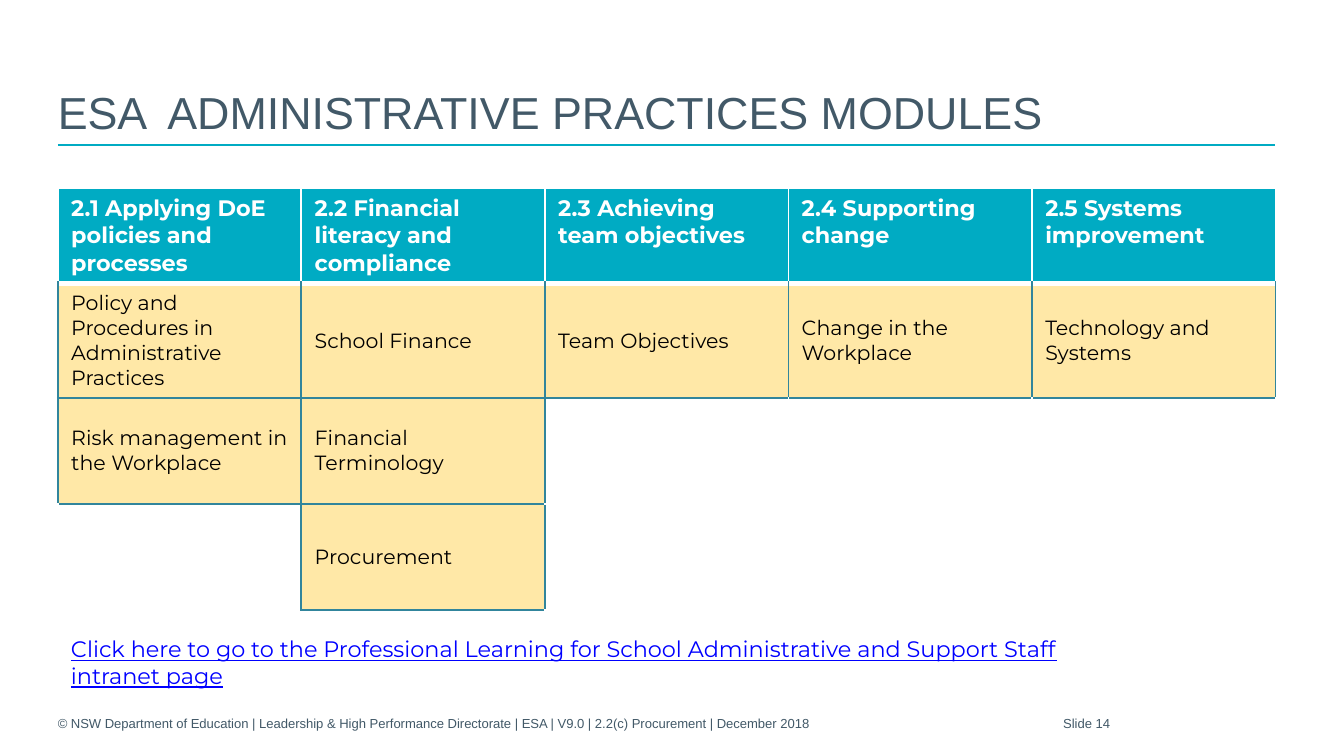
from dataclasses import dataclass

from lxml import etree
from pptx import Presentation
from pptx.dml.color import RGBColor
from pptx.enum.shapes import MSO_CONNECTOR
from pptx.enum.text import MSO_ANCHOR, MSO_AUTO_SIZE, PP_ALIGN
from pptx.oxml.ns import qn
from pptx.util import Inches, Pt

TOP, MIDDLE, BOTTOM = MSO_ANCHOR.TOP, MSO_ANCHOR.MIDDLE, MSO_ANCHOR.BOTTOM
LEFT, CENTER = PP_ALIGN.LEFT, PP_ALIGN.CENTER
NO_AUTOSIZE = MSO_AUTO_SIZE.NONE
STRAIGHT = MSO_CONNECTOR.STRAIGHT

# Page grid, in inches, on a 16:9 slide
SLIDE_W = 10
SLIDE_H = SLIDE_W * 9 / 16
MARGIN, CONTENT_W = 0.43, 9.06
RULE_Y, TABLE_Y, FOOTER_Y = 1.08, 1.4, 5.19
ROW_HEIGHTS = (0.69, 0.85, 0.79, 0.79)

TEAL, EDGE, SAND = "00ABC3", "31859C", "FFE8A7"
WHITE, BLACK, SLATE, LINK = "FFFFFF", "000000", "425968", "0000FF"

HEADERS = (
    "2.1 Applying DoE policies and processes",
    "2.2 Financial literacy and compliance",
    "2.3 Achieving team objectives",
    "2.4 Supporting change",
    "2.5 Systems improvement",
)
MODULES = (
    ("Policy and Procedures in Administrative Practices", "School Finance",
     "Team Objectives", "Change in the Workplace", "Technology and Systems"),
    ("Risk management in the Workplace", "Financial Terminology", "", "", ""),
    ("", "Procurement", "", "", ""),
)
GRID = (HEADERS, *MODULES)
# Border tag of each side, with the row and column step to its neighbour
SIDES = {"a:lnL": (0, -1), "a:lnR": (0, 1), "a:lnT": (-1, 0), "a:lnB": (1, 0)}


@dataclass
class Style:
    size: float
    color: str
    font: str = "Arial"
    bold: bool = False
    underline: bool = False
    align: PP_ALIGN = LEFT


@dataclass
class Label:
    text: str
    box: tuple
    style: Style
    anchor: MSO_ANCHOR = TOP
    inset: float = 0.1


FOOTER = Style(7, SLATE)
LABELS = (
    Label("© NSW Department of Education | Leadership & High Performance Directorate"
          " | ESA | V9.0 | 2.2(c) Procurement | December 2018",
          (MARGIN, FOOTER_Y, 7.48, 0.3), FOOTER, BOTTOM, 0),
    Label("Slide 14", (6.92, FOOTER_Y, 2.33, 0.3),
          Style(7, SLATE, align=CENTER), BOTTOM),
    Label("Click here to go to the Professional Learning for School Administrative"
          " and Support Staff intranet page",
          (MARGIN, 4.68, 7.8, 0.3), Style(12, LINK, "Montserrat", underline=True)),
)


def rgb(color: str) -> RGBColor:
    return RGBColor.from_string(color)


def write(tf, text: str, style: Style) -> None:
    tf.text = text
    p = tf.paragraphs[0]
    p.alignment = style.align
    for r in p.runs:
        r.font.name, r.font.size = style.font, Pt(style.size)
        r.font.bold, r.font.underline = style.bold, style.underline
        r.font.color.rgb = rgb(style.color)


def place(sp, label: Label) -> None:
    sp.left, sp.top, sp.width, sp.height = map(Inches, label.box)
    tf = sp.text_frame
    tf.word_wrap, tf.auto_size = True, NO_AUTOSIZE
    tf.vertical_anchor = label.anchor
    tf.margin_left, tf.margin_right = Inches(label.inset), Inches(0.1)
    tf.margin_top = tf.margin_bottom = Inches(0.05)
    write(tf, label.text, label.style)


def is_module(row: int, col: int) -> bool:
    return (0 < row < len(GRID) and 0 <= col < len(HEADERS)
            and bool(GRID[row][col]))


def edge(row: int, col: int, step: tuple) -> tuple:
    """Colour and points of the border between a cell and its neighbour."""
    near = (row + step[0], col + step[1])
    if step[0] and {row, near[0]} == {0, 1}:
        return WHITE, 3
    return (EDGE if is_module(row, col) or is_module(*near) else WHITE), 1


def add_border(cell, tag: str, color: str, points: float) -> None:
    ln = etree.SubElement(cell._tc.get_or_add_tcPr(), qn(tag), w=str(Pt(points)))
    fill = etree.SubElement(ln, qn("a:solidFill"))
    etree.SubElement(fill, qn("a:srgbClr"), val=color)


def add_modules_table(s) -> None:
    frame = s.shapes.add_table(
        len(GRID), len(HEADERS), Inches(MARGIN), Inches(TABLE_Y),
        Inches(CONTENT_W), Inches(sum(ROW_HEIGHTS)))
    table = frame.table
    table.horz_banding = False
    header = Style(12, WHITE, "Montserrat", bold=True)
    body = Style(11, BLACK, "Montserrat")
    for row, texts in enumerate(GRID):
        table.rows[row].height = Inches(ROW_HEIGHTS[row])
        for col, text in enumerate(texts):
            cell = table.cell(row, col)
            cell.vertical_anchor = MIDDLE if row else TOP
            write(cell.text_frame, text, body if row else header)
            for tag, step in SIDES.items():
                add_border(cell, tag, *edge(row, col, step))
            if text:
                cell.fill.solid()
                cell.fill.fore_color.rgb = rgb(SAND if row else TEAL)
            else:
                cell.fill.background()


def add_rule(s) -> None:
    y = Inches(RULE_Y)
    line = s.shapes.add_connector(
        STRAIGHT, Inches(MARGIN), y, Inches(MARGIN + CONTENT_W), y)
    line.line.color.rgb, line.line.width = rgb(TEAL), Pt(1)
    etree.SubElement(line._element.spPr, qn("a:effectLst"))


def main() -> None:
    prs = Presentation()
    prs.slide_width, prs.slide_height = Inches(SLIDE_W), Inches(SLIDE_H)
    s = prs.slides.add_slide(prs.slide_layouts[5])

    # Title and the rule below it
    add_rule(s)
    place(s.shapes.title, Label(
        "ESA  ADMINISTRATIVE PRACTICES MODULES",
        (MARGIN, 0.3, CONTENT_W, RULE_Y - 0.3), Style(24, SLATE), BOTTOM, 0))

    # Modules, then the link and footer
    add_modules_table(s)
    for label in LABELS:
        place(s.shapes.add_textbox(*map(Inches, label.box)), label)

    prs.save("out.pptx")


if __name__ == "__main__":
    main()
